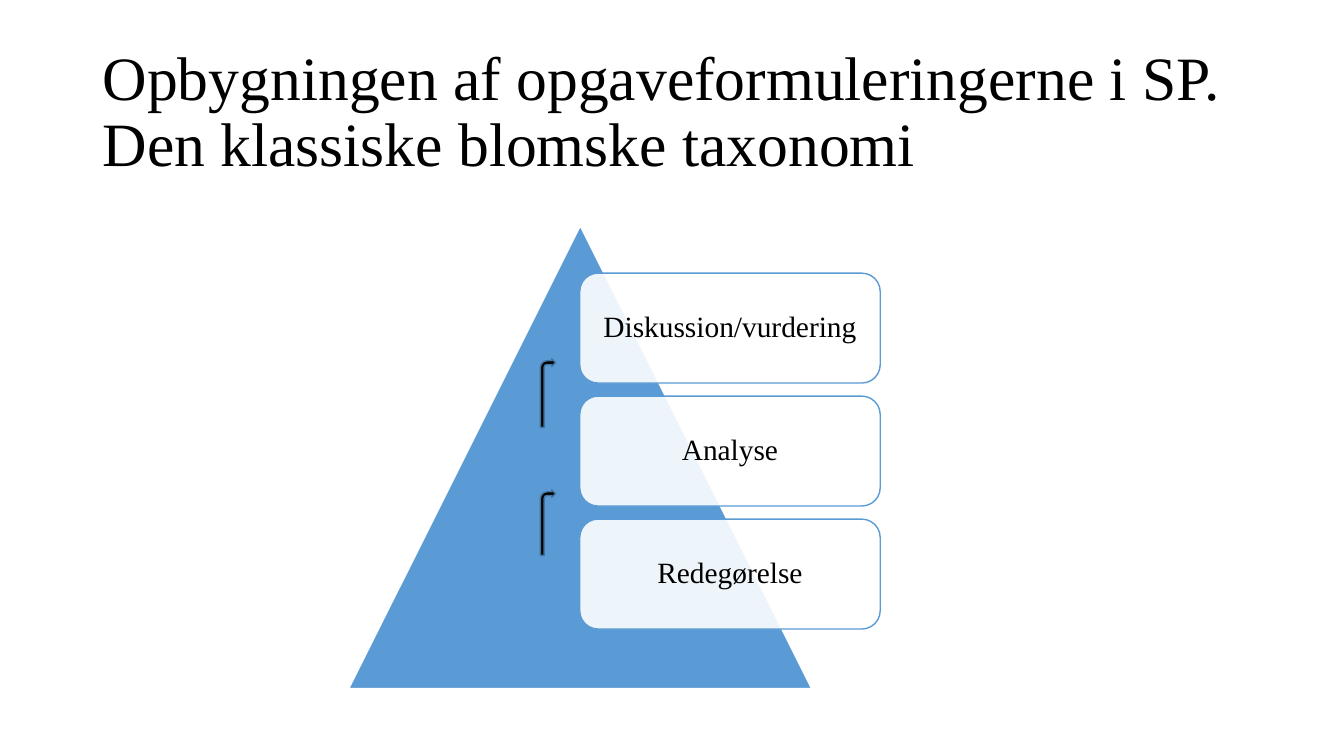
from lxml import etree
from pptx import Presentation
from pptx.dml.color import RGBColor
from pptx.enum import shapes, text
from pptx.oxml import ns
from pptx.util import Inches, Pt

BLACK = RGBColor(0, 0, 0)
WHITE = RGBColor(255, 255, 255)
BLUE = RGBColor(0x5B, 0x9B, 0xD5)
DARK = RGBColor(0x43, 0x73, 0x9E)
KIND = shapes.MSO_SHAPE
LEVELS = ("Diskussion/vurdering", "Analyse", "Redegørelse")
ARROWS = ((4.86, 0.65), (3.56, 0.68))


def write(shape, words, size, align):
    """Fill a shape with one paragraph of wrapped, middle-anchored text."""
    frame = shape.text_frame
    frame.text = words
    frame.word_wrap = True
    frame.vertical_anchor = text.MSO_ANCHOR.MIDDLE
    para = frame.paragraphs[0]
    para.alignment = align
    para.line_spacing = 0.9
    font = para.runs[0].font
    font.name = "Times New Roman"
    font.size = Pt(size)
    font.color.rgb = BLACK
    return frame


def draw(slide, kind, box, fill, line):
    """Add a preset shape with a solid fill and a thin line."""
    shape = slide.shapes.add_shape(kind, *map(Inches, box))
    shape.shadow.inherit = False
    shape.fill.solid()
    shape.fill.fore_color.rgb = fill
    shape.line.color.rgb = line
    shape.line.width = Pt(1)
    return shape


def fade(shape, share):
    """Set the opacity of a solid fill in percent."""
    color = shape.element.spPr.find(ns.qn("a:solidFill"))[0]
    etree.SubElement(color, ns.qn("a:alpha")).set("val", str(share * 1000))


def title(slide, words):
    """Add the slide title."""
    box = slide.shapes.add_textbox(*map(Inches, (0.92, 0.4, 11.5, 1.45)))
    write(box, words, 44, text.PP_ALIGN.LEFT)


def level(slide, words, top):
    """Add one translucent level box of the pyramid."""
    card = draw(slide, KIND.ROUNDED_RECTANGLE, (5.75, top, 2.98, 1.09), WHITE, BLUE)
    fade(card, 90)
    frame = write(card, words, 21, text.PP_ALIGN.CENTER)
    frame.margin_left = frame.margin_right = Inches(0.09)
    frame.margin_top = frame.margin_bottom = Inches(0.09)


def main():
    """Build and save the slide."""
    deck = Presentation()
    deck.slide_width, deck.slide_height = Inches(13.33), Inches(7.5)
    slide = deck.slides.add_slide(deck.slide_layouts[6])
    title(slide, "Opbygningen af opgaveformuleringerne i SP. Den klassiske blomske taxonomi")
    draw(slide, KIND.ISOSCELES_TRIANGLE, (3.46, 2.24, 4.59, 4.59), BLUE, WHITE)
    for row, words in enumerate(LEVELS):
        level(slide, words, 2.71 + row * 1.22)
    for top, height in ARROWS:
        draw(slide, KIND.BENT_ARROW, (5.36, top, 0.15, height), BLACK, DARK)
    deck.save("out.pptx")


if __name__ == "__main__":
    main()
